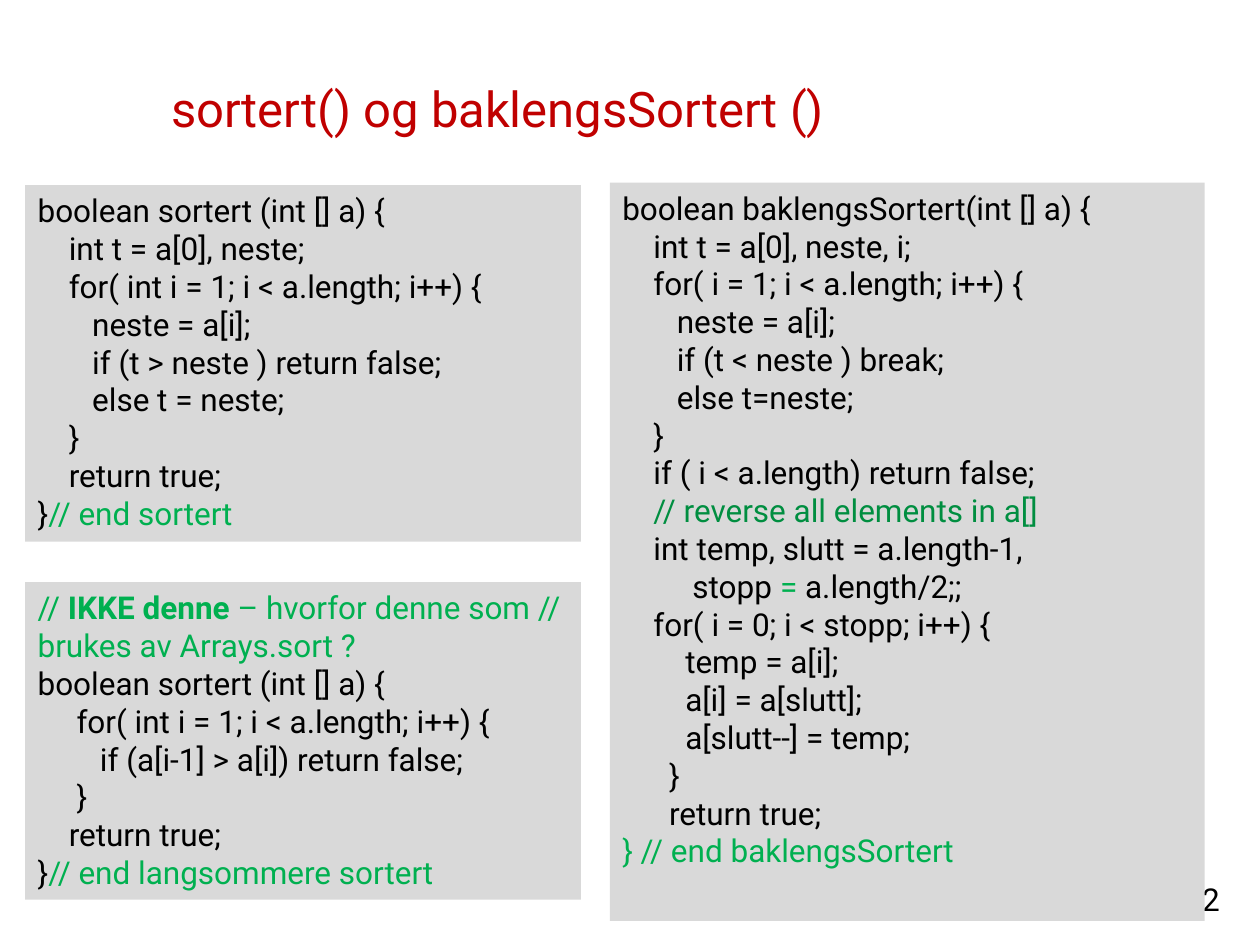
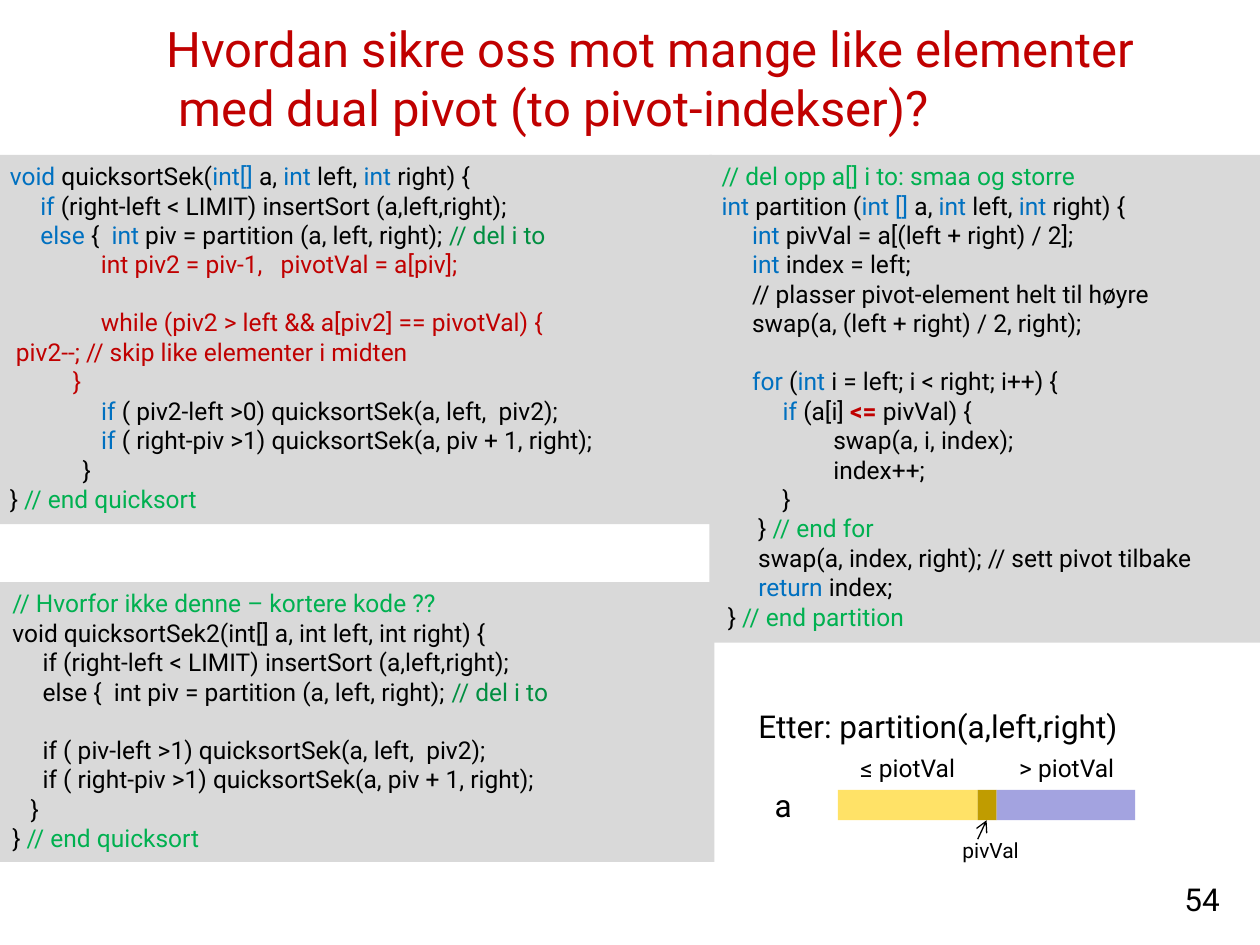
from pptx import Presentation
from pptx.dml.color import RGBColor
from pptx.enum.shapes import MSO_CONNECTOR as CONN, MSO_SHAPE as SHAPE
from pptx.enum.text import MSO_ANCHOR as ANCHOR, PP_ALIGN as ALIGN
from pptx.oxml.ns import qn
from pptx.util import Pt
from lxml.etree import SubElement

PX = 9144
FONT = "Roboto"
LINE_HEIGHT = 1.17
GREY, YELLOW, LILAC, OCHRE = "D9D9D9", "FFE267", "A3A3E0", "C09C00"
INK = {"k": "000000", "r": "C00000", "b": "0070C0", "g": "00B050", "d": "008E40"}

# "~" starts a run; its letter picks the ink, a capital letter makes it bold
SORTERT = """
boolean sortert (int [] a) {
    int t = a[0], neste;
    for( int i = 1; i < a.length; i++) {
       neste = a[i];
       if (t > neste ) return false;
       else t = neste;
    }
    return true;
}~g// end sortert
"""

BAKLENGS = """
boolean baklengsSortert(int [] a) {
    int t = a[0], neste, i;
    for( i = 1; i < a.length; i++) {
       neste = a[i];
       if (t < neste ) break;
       else t=neste;
    }
    if ( i < a.length) return false;
~d    // reverse all elements in a[]
    int temp, slutt = a.length-1,
         stopp ~g=~k a.length/2;;
    for( i = 0; i < stopp; i++) {
\ttemp = a[i];
\ta[i] = a[slutt];
\ta[slutt--] = temp;
      }
      return true;
~g} // end baklengsSortert
"""

LANGSOM = """
~g// ~GIKKE denne ~g– hvorfor denne som // brukes av Arrays.sort ?
boolean sortert (int [] a) {
     for( int i = 1; i < a.length; i++) {
        if (a[i-1] > a[i]) return false;
     }
    return true;
}~g// end langsommere sortert
"""

QUICKSORT = """
~bvoid ~kquicksortSek(~bint[] ~ka, ~bint ~kleft, ~bint ~kright) {
     ~bif ~k(right-left < LIMIT) insertSort (a,left,right);
     ~belse ~k{  ~bint ~kpiv = partition (a, left, right); ~d// del i to
~r               int piv2 = piv-1,   pivotVal = a[piv];

~r               while (piv2 > left && a[piv2] == pivotVal) {
~r piv2--; // skip like elementer i midten
~r\t}
               ~bif ~k( piv2-left >0) quicksortSek(a, left,  piv2);
               ~bif ~k( right-piv >1) quicksortSek(a, piv + 1, right);
            }
} ~g// end quicksort
"""

PARTITION = """
~g// del opp a[] i to: smaa og storre
~bint ~kpartition (~bint []~k a, ~bint ~kleft, ~bint ~kright) {
     ~bint ~kpivVal = a[(left + right) / 2];
     ~bint ~kindex = left;
     // plasser pivot-element helt til høyre
     swap(a, (left + right) / 2, right);

     ~bfor~k (~bint ~ki = left; i < right; i++) {
          ~bif ~k(a[i] ~R<= ~kpivVal) {
   \t        swap(a, i, index);
  \t        index++;
          }
      } ~g// end for
      swap(a, index, right); // sett pivot tilbake
      ~breturn ~kindex;
 } ~g// end partition
"""

QUICKSORT2 = """
~g// Hvorfor ikke denne – kortere kode ??
void quicksortSek2(int[] a, int left, int right) {
     if (right-left < LIMIT) insertSort (a,left,right);
     else {  int piv = partition (a, left, right); ~d// del i to

     if ( piv-left >1) quicksortSek(a, left,  piv2);
     if ( right-piv >1) quicksortSek(a, piv + 1, right);
   }
} ~g// end quicksort
"""


def rgb(value):
    return RGBColor.from_string(value)


class Deck:
    def __init__(self):
        self.prs = Presentation()
        self.prs.slide_width, self.prs.slide_height = 1000 * PX, 750 * PX
        self.s = None

    def slide(self, title, title_box, number):
        self.s = self.prs.slides.add_slide(self.prs.slide_layouts[6])
        self.text(title, title_box, 28, anchor=ANCHOR.BOTTOM)
        self.text(number, (770, 683, 208, 50), 18, anchor=ANCHOR.BOTTOM, align=ALIGN.RIGHT)

    def text(self, text, box, size, anchor=ANCHOR.TOP, align=ALIGN.LEFT):
        sp = self.s.shapes.add_textbox(*(v * PX for v in box))
        tf = sp.text_frame
        tf.word_wrap = True
        tf.vertical_anchor = anchor
        p, gap = tf.paragraphs[0], 0
        for i, line in enumerate(text.strip("\n").split("\n")):
            if not line:
                gap += size * LINE_HEIGHT
                continue
            if i:
                p = tf.add_paragraph()
            p.alignment = align
            if gap:
                p.space_before = Pt(gap)
                gap = 0
            self.runs(p, line, size)
        return sp

    def runs(self, p, line, size):
        for part in ("k" + line).split("~"):
            ink, words = part[0], part[1:]
            if not words:
                continue
            r = p.add_run()
            r.text = words
            fmt = {"name": FONT, "size": Pt(size), "bold": ink.isupper()}
            for key, value in fmt.items():
                setattr(r.font, key, value)
            r.font.color.rgb = rgb(INK[ink.lower()])

    def code(self, text, box, size):
        sp = self.text(text, box, size)
        sp.fill.solid()
        sp.fill.fore_color.rgb = rgb(GREY)

    def bar(self, box, color):
        sp = self.s.shapes.add_shape(SHAPE.RECTANGLE, *(v * PX for v in box))
        sp.shadow.inherit = False
        sp.fill.solid()
        sp.fill.fore_color.rgb = rgb(color)
        sp.line.fill.background()

    def arrow(self, *ends):
        sp = self.s.shapes.add_connector(CONN.STRAIGHT, *(v * PX for v in ends))
        sp.line.width = Pt(0.75)
        sp.line.color.rgb = rgb(INK["k"])
        SubElement(sp.line._get_or_add_ln(), qn("a:tailEnd"), type="arrow")
        SubElement(sp._element.spPr, qn("a:effectLst"))


def sorted_checks(deck):
    deck.slide("~rsortert() og baklengsSortert ()", (126, 23, 852, 91), "52")
    deck.code(SORTERT, (20, 147, 441, 283), 18)
    deck.code(BAKLENGS, (484, 145, 472, 586), 18)
    deck.code(LANGSOM, (20, 462, 441, 252), 18)


def dual_pivot(deck):
    deck.slide("~rHvordan sikre oss mot mange like elementer\n"
               "~r med dual pivot (to pivot-indekser)?", (122, 53, 852, 60), "54")
    deck.code(QUICKSORT, (-2, 123, 567, 293), 14)
    deck.code(PARTITION, (563, 123, 437, 387), 14)
    deck.code(QUICKSORT2, (0, 462, 567, 222), 14)

    x = 665
    for width, color in ((111, YELLOW), (15, OCHRE), (110, LILAC)):
        deck.bar((x, 627, width, 24), color)
        x += width
    for label, box, size in (
        ("≤ piotVal", (673, 593, 118, 34), 14),
        ("> piotVal", (799, 593, 118, 34), 14),
        ("a", (605, 619, 34, 40), 18),
        ("pivVal", (754, 660, 124, 30), 12),
        ("Etter: partition(a,left,right)", (592, 556, 326, 40), 18),
    ):
        deck.text(label, box, size)
    deck.arrow(776, 666, 783, 651)


def main():
    deck = Deck()
    sorted_checks(deck)
    dual_pivot(deck)
    deck.prs.save("out.pptx")


if __name__ == "__main__":
    main()
